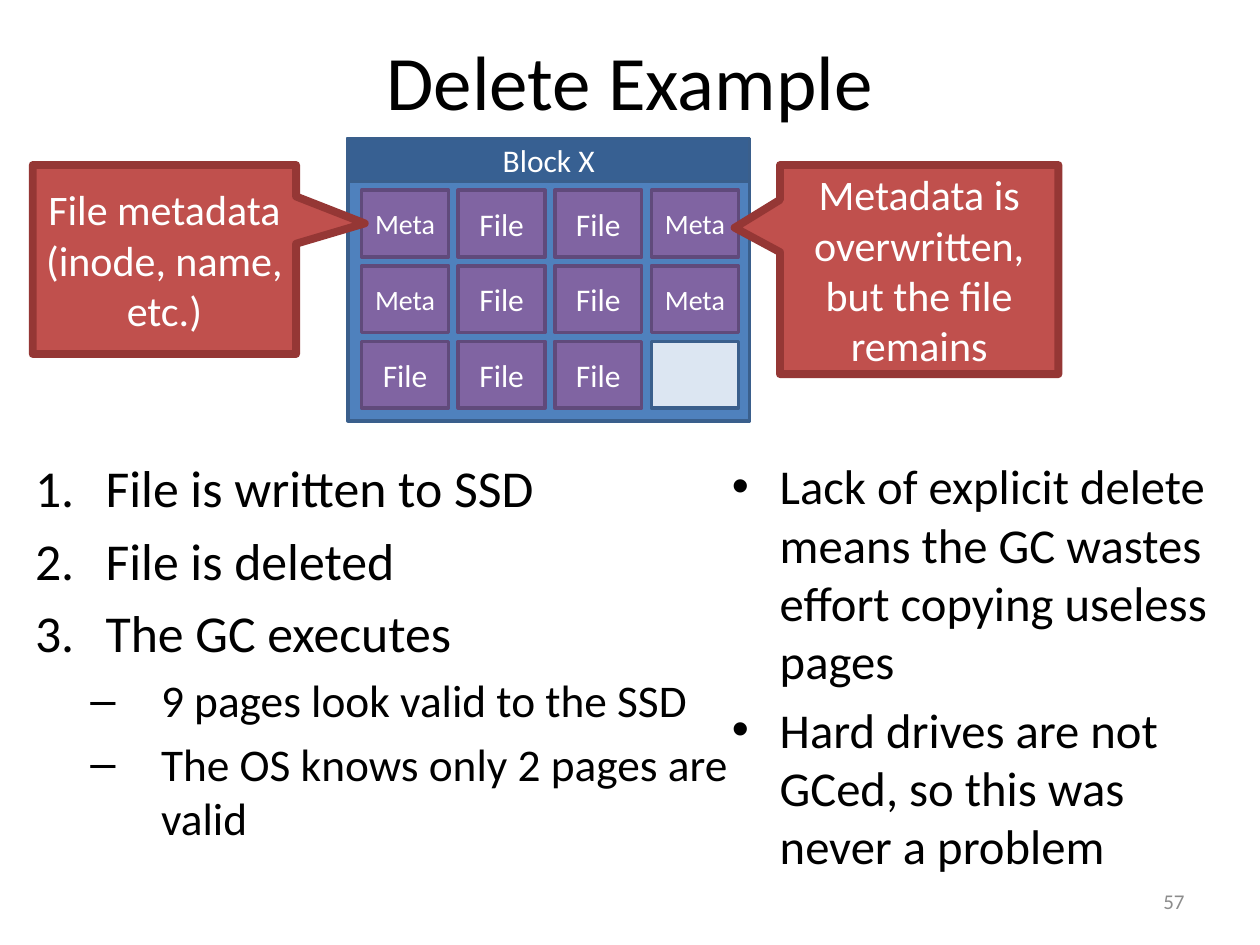
from dataclasses import dataclass

from lxml.etree import SubElement
from pptx import Presentation
from pptx.dml.color import RGBColor
from pptx.enum.shapes import MSO_SHAPE as Shape
from pptx.enum.text import MSO_ANCHOR as Anchor, PP_ALIGN as Align
from pptx.oxml.ns import qn
from pptx.util import Inches, Pt


@dataclass(frozen=True)
class Theme:
    font: str = "Calibri"
    text: str = "000000"
    light: str = "FFFFFF"
    muted: str = "8C8C8C"
    block: tuple = ("4F81BD", "3A5F8C", 2)  # fill, line, line width
    header: tuple = ("376092", "3A5F8C", 2)
    empty: tuple = ("DCE6F2", "3A5F8C", 2)
    page: tuple = ("8064A2", "604A7B", 2)
    callout: tuple = ("C0504D", "953735", 4.5)
    title_size: float = 44
    callout_size: float = 24
    label_size: float = 18
    meta_size: float = 16
    number_size: float = 12


THEME = Theme()
WIDTH, HEIGHT = 10, 7.5

TITLE = "Delete Example"
PAGE_NUMBER = "57"
BLOCK_NAME = "Block X"
PAGES = [
    ["Meta", "File", "File", "Meta"],
    ["Meta", "File", "File", "Meta"],
    ["File", "File", "File", ""],
]
CALLOUTS = [  # text, box, pointer tip
    ("File metadata (inode, name, etc.)", (0.26, 1.31, 2.09, 1.5), (0.761, -0.191)),
    ("Metadata is overwritten, but the file remains", (6.19, 1.31, 2.21, 1.66), (-0.663, -0.2)),
]
# marker, text size, left indent, hanging indent, level
STEP = ("1.", 29.6, 0.56, 0.56, 0)
DETAIL = ("–", 25.9, 1, 0.56, 1)
POINT = ("•", 27.8, 0.38, 0.38, 0)
STEPS = [
    (STEP, "File is written to SSD"),
    (STEP, "File is deleted"),
    (STEP, "The GC executes"),
    (DETAIL, "9 pages look valid to the SSD"),
    (DETAIL, "The OS knows only 2 pages are valid"),
]
POINTS = [
    (POINT, "Lack of explicit delete means the GC wastes effort copying useless pages"),
    (POINT, "Hard drives are not GCed, so this was never a problem"),
]

BLOCK_BOX = (2.76, 1.1, 3.19, 2.24)
HEADER_BOX = (2.76, 1.1, 3.19, 0.34)
GRID_LEFT, GRID_TOP = 2.87, 1.51
COLUMN_STEP, ROW_STEP = 2.3 / 3, 0.6
PAGE_WIDTH, PAGE_HEIGHT = 0.69, 0.53


def format_paragraph(paragraph, size, color, align):
    paragraph.alignment = align
    for run in paragraph.runs:
        run.font.name = THEME.font
        run.font.size = Pt(size)
        run.font.color.rgb = RGBColor.from_string(color)


def add_text(slide, box, text, size, color, align):
    frame = slide.shapes.add_textbox(*map(Inches, box)).text_frame
    frame.word_wrap = True
    frame.vertical_anchor = Anchor.MIDDLE
    frame.text = text
    format_paragraph(frame.paragraphs[0], size, color, align)


def add_box(slide, box, style, text="", size=THEME.label_size, kind=Shape.RECTANGLE):
    fill, line, line_width = style
    shape = slide.shapes.add_shape(kind, *map(Inches, box))
    shape.shadow.inherit = False
    shape.fill.solid()
    shape.fill.fore_color.rgb = RGBColor.from_string(fill)
    shape.line.color.rgb = RGBColor.from_string(line)
    shape.line.width = Pt(line_width)
    if text:
        frame = shape.text_frame
        frame.word_wrap = True
        frame.vertical_anchor = Anchor.MIDDLE
        frame.margin_left = frame.margin_right = Inches(0.05)
        frame.margin_top = frame.margin_bottom = 0
        frame.text = text
        format_paragraph(frame.paragraphs[0], size, THEME.light, Align.CENTER)
    return shape


def set_marker(paragraph, marker, indent, hanging):
    properties = paragraph._p.get_or_add_pPr()
    properties.set("marL", str(Inches(indent)))
    properties.set("indent", str(-Inches(hanging)))
    if marker == "1.":
        SubElement(properties, qn("a:buAutoNum"), type="arabicPeriod")
    else:
        SubElement(properties, qn("a:buFont"), typeface="Arial")
        SubElement(properties, qn("a:buChar"), char=marker)


def add_list(slide, box, items):
    frame = slide.shapes.add_textbox(*map(Inches, box)).text_frame
    frame.word_wrap = True
    frame.text = "\n".join(text for _, text in items)
    for paragraph, (style, _) in zip(frame.paragraphs, items):
        marker, size, indent, hanging, level = style
        paragraph.level = level
        paragraph.space_before = Pt(round(size * 0.2, 1))
        format_paragraph(paragraph, size, THEME.text, Align.LEFT)
        set_marker(paragraph, marker, indent, hanging)


def add_block(slide):
    add_box(slide, BLOCK_BOX, THEME.block)
    add_box(slide, HEADER_BOX, THEME.header, BLOCK_NAME)
    for row, labels in enumerate(PAGES):
        for column, label in enumerate(labels):
            box = (GRID_LEFT + column * COLUMN_STEP, GRID_TOP + row * ROW_STEP,
                   PAGE_WIDTH, PAGE_HEIGHT)
            style = THEME.page if label else THEME.empty
            size = THEME.meta_size if label == "Meta" else THEME.label_size
            add_box(slide, box, style, label, size)


def main():
    presentation = Presentation()
    presentation.slide_width, presentation.slide_height = Inches(WIDTH), Inches(HEIGHT)
    slide = presentation.slides.add_slide(presentation.slide_layouts[6])
    add_text(slide, (0.5, 0.01, 9, 1.25), TITLE, THEME.title_size, THEME.text, Align.CENTER)
    add_list(slide, (0.18, 3.57, 5.7, 3.61), STEPS)
    add_text(slide, (7.17, 6.95, 2.33, 0.4), PAGE_NUMBER, THEME.number_size,
             THEME.muted, Align.RIGHT)
    add_block(slide)
    for text, box, tip in CALLOUTS:
        callout = add_box(slide, box, THEME.callout, text, THEME.callout_size,
                          Shape.RECTANGULAR_CALLOUT)
        callout.adjustments[0], callout.adjustments[1] = tip
    add_list(slide, (5.71, 3.57, 4.12, 3.61), POINTS)
    presentation.save("out.pptx")


if __name__ == "__main__":
    main()
